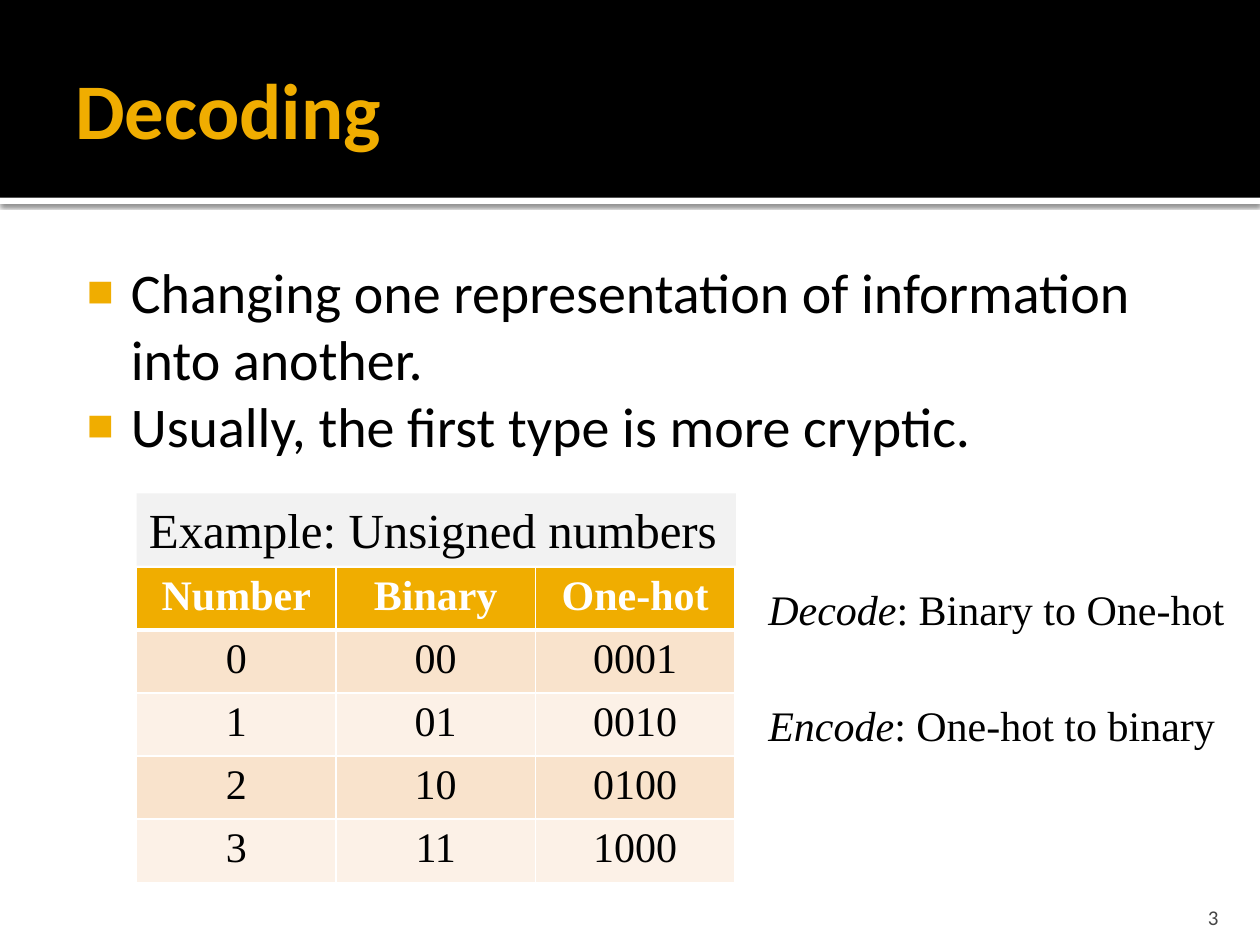
from lxml import etree
from pptx import Presentation
from pptx.dml.color import RGBColor
from pptx.enum.shapes import MSO_SHAPE
from pptx.enum.text import MSO_ANCHOR, MSO_AUTO_SIZE, PP_ALIGN
from pptx.oxml.ns import qn
from pptx.util import Pt

RECT = MSO_SHAPE.RECTANGLE
TOP, MIDDLE, BOTTOM = MSO_ANCHOR.TOP, MSO_ANCHOR.MIDDLE, MSO_ANCHOR.BOTTOM
LEFT, CENTER, RIGHT = PP_ALIGN.LEFT, PP_ALIGN.CENTER, PP_ALIGN.RIGHT
GROW = MSO_AUTO_SIZE.SHAPE_TO_FIT_TEXT


def color(code):
    return RGBColor.from_string(code)


def node(parent, tag, **attrs):
    return etree.SubElement(parent, qn(tag), {k: str(v) for k, v in attrs.items()})


class Deck:
    sans, serif = "Calibri", "Times New Roman"
    gold, black, white = "F0AD00", "000000", "FFFFFF"
    bands = ("F9E3CC", "FCF1E7")

    def __init__(self, wide, high):
        self.prs = Presentation()
        self.prs.slide_width, self.prs.slide_height = Pt(wide), Pt(high)
        self.slide = self.prs.slides.add_slide(self.prs.slide_layouts[6])

    def style(self, run, size, font, ink, bold=False, italic=False):
        run.font.size, run.font.name = Pt(size), font
        run.font.bold, run.font.italic = bold, italic
        run.font.color.rgb = color(ink)

    def rect(self, box, fill):
        shape = self.slide.shapes.add_shape(RECT, *map(Pt, box))
        shape.shadow.inherit = False
        shape.fill.solid()
        shape.fill.fore_color.rgb = color(fill)
        shape.line.fill.background()
        return shape

    def shade(self, shape):
        effects = shape._element.spPr.find(qn("a:effectLst"))
        cast = node(effects, "a:outerShdw", blurRad=Pt(2.5), dist=Pt(0.8),
                    dir=5400000, algn="t", rotWithShape=0)
        node(node(cast, "a:srgbClr", val=self.black), "a:alpha", val=60000)

    def label(self, shape, lines, size, font, ink, bold=False, align=LEFT,
              anchor=TOP, inset=(7.2, 3.6, 7.2, 3.6), wrap=True):
        frame = shape.text_frame
        frame.text = "\n".join(lines)
        frame.word_wrap = wrap
        if not wrap:
            frame.auto_size = GROW
        frame.vertical_anchor = anchor
        (frame.margin_left, frame.margin_top,
         frame.margin_right, frame.margin_bottom) = map(Pt, inset)
        for para in frame.paragraphs:
            para.alignment = align
            for run in para.runs:
                self.style(run, size, font, ink, bold)
        return frame

    def text(self, box, lines, size, font, ink, **more):
        shape = self.slide.shapes.add_textbox(*map(Pt, box))
        return self.label(shape, lines, size, font, ink, **more)

    def bullet(self, frame):
        for para in frame.paragraphs:
            props = para._p.get_or_add_pPr()
            props.set("marL", str(Pt(34.5)))
            props.set("indent", str(Pt(-25.2)))
            node(node(props, "a:buClr"), "a:srgbClr", val=self.gold)
            node(props, "a:buSzPct", val=80000)
            node(props, "a:buFont", typeface="Arial")
            node(props, "a:buChar", char="■")

    def term(self, box, word, rest):
        frame = self.text(box, [word], 24, self.serif, self.black, wrap=False)
        para = frame.paragraphs[0]
        para.runs[0].font.italic = True
        run = para.add_run()
        run.text = rest
        self.style(run, 24, self.serif, self.black)

    def edge(self, cell, base):
        props = cell._tc.get_or_add_tcPr()
        for side, width in zip("LRTB", (1, 1, 1, base)):
            line = node(props, "a:ln" + side, w=Pt(width))
            node(node(line, "a:solidFill"), "a:srgbClr", val=self.white)

    def table(self, left, top, wide, high, rows):
        count, span = len(rows), len(rows[0])
        grid = self.slide.shapes.add_table(
            count, span, Pt(left), Pt(top), Pt(wide * span), Pt(high * count)).table
        for r, row in enumerate(rows):
            head = r == 0
            grid.rows[r].height = Pt(high)
            for c, value in enumerate(row):
                cell = grid.cell(r, c)
                self.edge(cell, 3 if head else 1)
                cell.fill.solid()
                cell.fill.fore_color.rgb = color(
                    self.gold if head else self.bands[(r - 1) % 2])
                cell.text_frame.text = value
                para = cell.text_frame.paragraphs[0]
                para.alignment = CENTER
                self.style(para.runs[0], 24, self.serif,
                           self.white if head else self.black, head)


def main():
    deck = Deck(720, 540)

    # Header band with its shaded rule
    deck.shade(deck.rect((0, 113, 720, 3.6), deck.white))
    deck.rect((0, 0, 720, 113), deck.black)
    deck.text((36, 12.2, 648, 98.6), ["Decoding"], 45, deck.sans, deck.gold,
              bold=True, anchor=MIDDLE, inset=(7.2, 3.6, 3.6, 3.6))

    # Main points
    points = ["Changing one representation of information into another.",
              "Usually, the first type is more cryptic."]
    deck.bullet(deck.text((36, 139.7, 648, 130.3), points, 32, deck.sans,
                          deck.black, inset=(4.3, 7.2, 7.2, 3.6)))

    # Page number
    deck.text((645.8, 509.8, 57.6, 21.6), ["3"], 12, deck.sans, "454545",
              align=RIGHT, anchor=BOTTOM, inset=(7.2, 3.6, 7.2, 0))

    # Example table and its caption
    codes = [(str(n), f"{n:02b}", f"{1 << n:04b}") for n in range(4)]
    deck.table(78, 324, 114, 31.2, [("Number", "Binary", "One-hot")] + codes)
    caption = deck.rect((78, 282, 342.5, 41.2), "F2F2F2")
    deck.label(caption, ["Example: Unsigned numbers"], 28, deck.serif,
               deck.black, wrap=False)

    # Terms beside the table
    deck.term((432, 330, 278, 36), "Decode", ": Binary to One-hot")
    deck.term((432, 396, 274, 36), "Encode", ": One-hot to binary")

    deck.prs.save("out.pptx")


if __name__ == "__main__":
    main()
